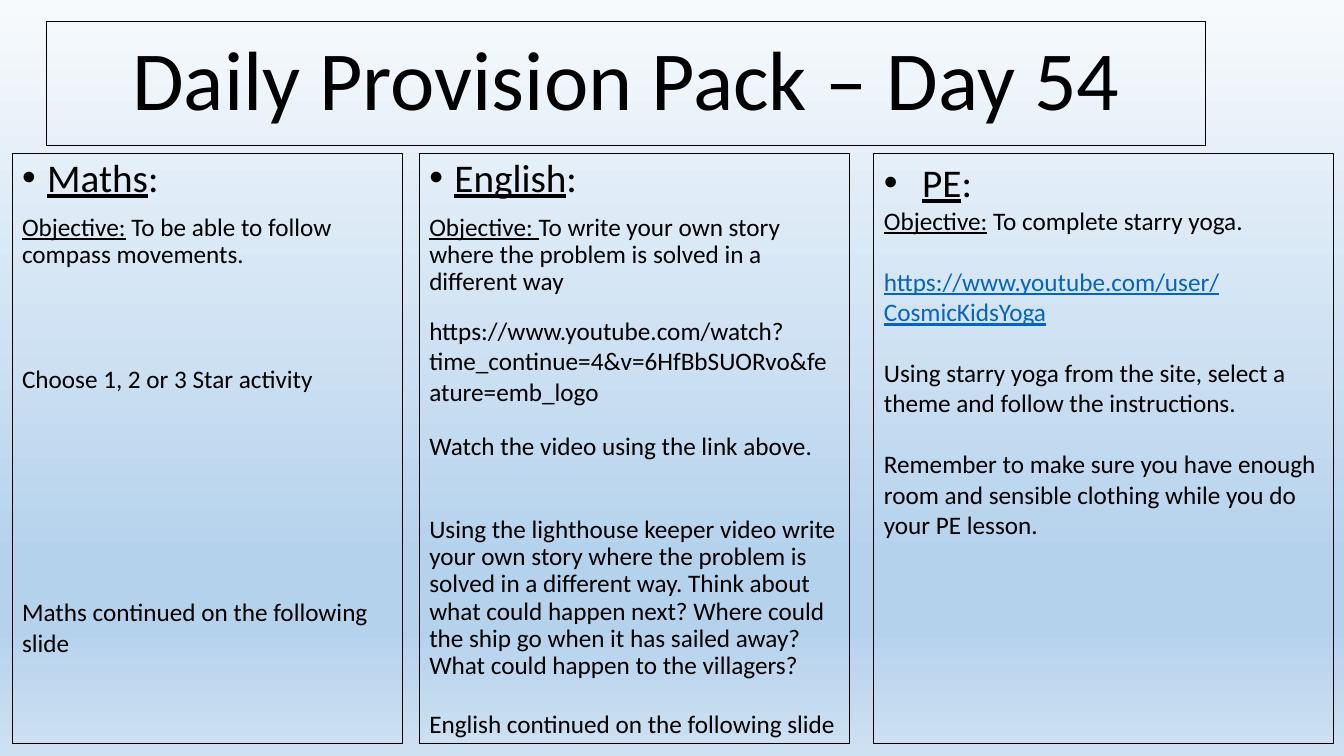
from dataclasses import dataclass

import lxml.etree
import pptx
import pptx.dml.color
import pptx.enum.text
import pptx.oxml.ns
import pptx.util

FONT = "Calibri"
BLACK = "000000"
LINK_BLUE = "0563C1"
BACKGROUND_STOPS = ((0, "F7FAFD"), (74, "B5D2EC"), (83, "B5D2EC"), (100, "CEE1F2"))
HEADING_SIZE = 28
BODY_SIZE = 18
TITLE_SIZE = 60
COLUMN_TOP = 20.27
COLUMN_HEIGHT = 78.13


@dataclass(frozen=True)
class Area:
    """Left, top, width and height in percent of the slide's size."""
    left: float
    top: float
    width: float
    height: float


@dataclass(frozen=True)
class Piece:
    text: str
    underline: bool = False
    color: str = BLACK
    size: int = BODY_SIZE


@dataclass(frozen=True)
class Line:
    pieces: tuple[Piece, ...]
    space_before: float = 0
    bullet_indent: float = 0


@dataclass(frozen=True)
class Panel:
    area: Area
    lines: tuple[Line, ...]
    line_spacing: float = 1.0
    outlined: bool = False


def heading(subject: str, indent: float) -> Line:
    pieces = (Piece(subject, True, size=HEADING_SIZE), Piece(":", size=HEADING_SIZE))
    return Line(pieces, bullet_indent=indent)


def objective(label: str, text: str, space_before: float = 0) -> Line:
    return Line((Piece(label, True), Piece(text)), space_before)


def plain(text: str, space_before: float = 0) -> Line:
    return Line((Piece(text),), space_before)


def column(left: float, width: float, lines: tuple[Line, ...], line_spacing: float) -> Panel:
    return Panel(Area(left, COLUMN_TOP, width, COLUMN_HEIGHT), lines, line_spacing, True)


PANELS = (
    column(0.9, 29.03, (
        heading("Maths", 0.25),
        objective("Objective:", " To be able to follow compass movements.", 10),
        plain("Choose 1, 2 or 3 Star activity", 69.5),
    ), 0.9),
    column(31.2, 32.03, (
        heading("English", 0.25),
        objective("Objective: ", "To write your own story where the problem is solved in a different way", 10),
        plain("Watch the video using the link above.", 98.5),
        plain("Using the lighthouse keeper video write your own story where the problem is "
              "solved in a different way. Think about what could happen next? Where could "
              "the ship go when it has sailed away? What could happen to the villagers?", 39.5),
    ), 0.9),
    column(65.03, 34.2, (
        heading("PE", 0.38),
        objective("Objective:", " To complete starry yoga."),
        Line((Piece("https://www.youtube.com/user/CosmicKidsYoga", True, LINK_BLUE),), 22),
        plain("Using starry yoga from the site, select a theme and follow the instructions.", 22),
        plain("Remember to make sure you have enough room and sensible clothing while you do "
              "your PE lesson.", 22),
    ), 1.0),
    Panel(Area(0.9, 78.27, 27.83, 9.47), (plain("Maths continued on the following slide"),)),
    Panel(Area(31.2, 41.07, 31.5, 13.47), (
        plain("https://www.youtube.com/watch?time_continue=4&v=6HfBbSUORvo&feature=emb_logo"),
    )),
    Panel(Area(31.2, 93.07, 32.03, 5.33), (plain("English continued on the following slide"),)),
)


def rgb(color: str) -> pptx.dml.color.RGBColor:
    return pptx.dml.color.RGBColor.from_string(color)


def place(shape, area: Area, presentation) -> None:
    shape.left = round(presentation.slide_width * area.left / 100)
    shape.top = round(presentation.slide_height * area.top / 100)
    shape.width = round(presentation.slide_width * area.width / 100)
    shape.height = round(presentation.slide_height * area.height / 100)


def outline(shape) -> None:
    shape.line.color.rgb = rgb(BLACK)
    shape.line.width = pptx.util.Pt(0.75)


def add_bullet(paragraph, indent: float) -> None:
    properties = paragraph._p.get_or_add_pPr()
    width = pptx.util.Inches(indent)
    properties.set("marL", str(width))
    properties.set("indent", str(-width))
    for tag, attribute, value in (("a:buFont", "typeface", "Arial"), ("a:buChar", "char", "•")):
        element = lxml.etree.SubElement(properties, pptx.oxml.ns.qn(tag))
        element.set(attribute, value)


def add_piece(paragraph, piece: Piece) -> None:
    run = paragraph.add_run()
    run.text = piece.text
    run.font.name = FONT
    run.font.size = pptx.util.Pt(piece.size)
    run.font.underline = piece.underline
    run.font.color.rgb = rgb(piece.color)


def write_lines(text_frame, lines: tuple[Line, ...], line_spacing: float) -> None:
    text_frame.word_wrap = True
    text_frame.auto_size = pptx.enum.text.MSO_AUTO_SIZE.NONE
    for index, line in enumerate(lines):
        paragraph = text_frame.add_paragraph() if index else text_frame.paragraphs[0]
        if line.bullet_indent:
            add_bullet(paragraph, line.bullet_indent)
        paragraph.line_spacing = line_spacing
        paragraph.space_before = pptx.util.Pt(line.space_before)
        for piece in line.pieces:
            add_piece(paragraph, piece)


def paint_background(slide) -> None:
    fill = slide.background.fill
    fill.gradient()
    fill.gradient_angle = 270
    stops = slide.element.find(".//" + pptx.oxml.ns.qn("a:gsLst"))
    for stop in list(stops):
        stops.remove(stop)
    for percent, color in BACKGROUND_STOPS:
        stop = lxml.etree.SubElement(stops, pptx.oxml.ns.qn("a:gs"), pos=str(percent * 1000))
        lxml.etree.SubElement(stop, pptx.oxml.ns.qn("a:srgbClr"), val=color)


def add_title(slide, presentation) -> None:
    title = slide.shapes.title
    place(title, Area(3.45, 2.8, 86.25, 16.4), presentation)
    outline(title)
    title.text_frame.vertical_anchor = pptx.enum.text.MSO_ANCHOR.MIDDLE
    line = Line((Piece("Daily Provision Pack – Day 54", size=TITLE_SIZE),))
    write_lines(title.text_frame, (line,), 0.9)
    title.text_frame.paragraphs[0].alignment = pptx.enum.text.PP_ALIGN.CENTER


def add_panel(slide, panel: Panel, presentation) -> None:
    shape = slide.shapes.add_textbox(0, 0, 0, 0)
    place(shape, panel.area, presentation)
    if panel.outlined:
        outline(shape)
    write_lines(shape.text_frame, panel.lines, panel.line_spacing)


def main() -> None:
    presentation = pptx.Presentation()
    presentation.slide_width = pptx.util.Inches(13.33)
    presentation.slide_height = pptx.util.Inches(7.5)
    slide = presentation.slides.add_slide(presentation.slide_layouts.get_by_name("Title Only"))
    paint_background(slide)
    add_title(slide, presentation)
    for panel in PANELS:
        add_panel(slide, panel, presentation)
    presentation.save("out.pptx")


if __name__ == "__main__":
    main()
